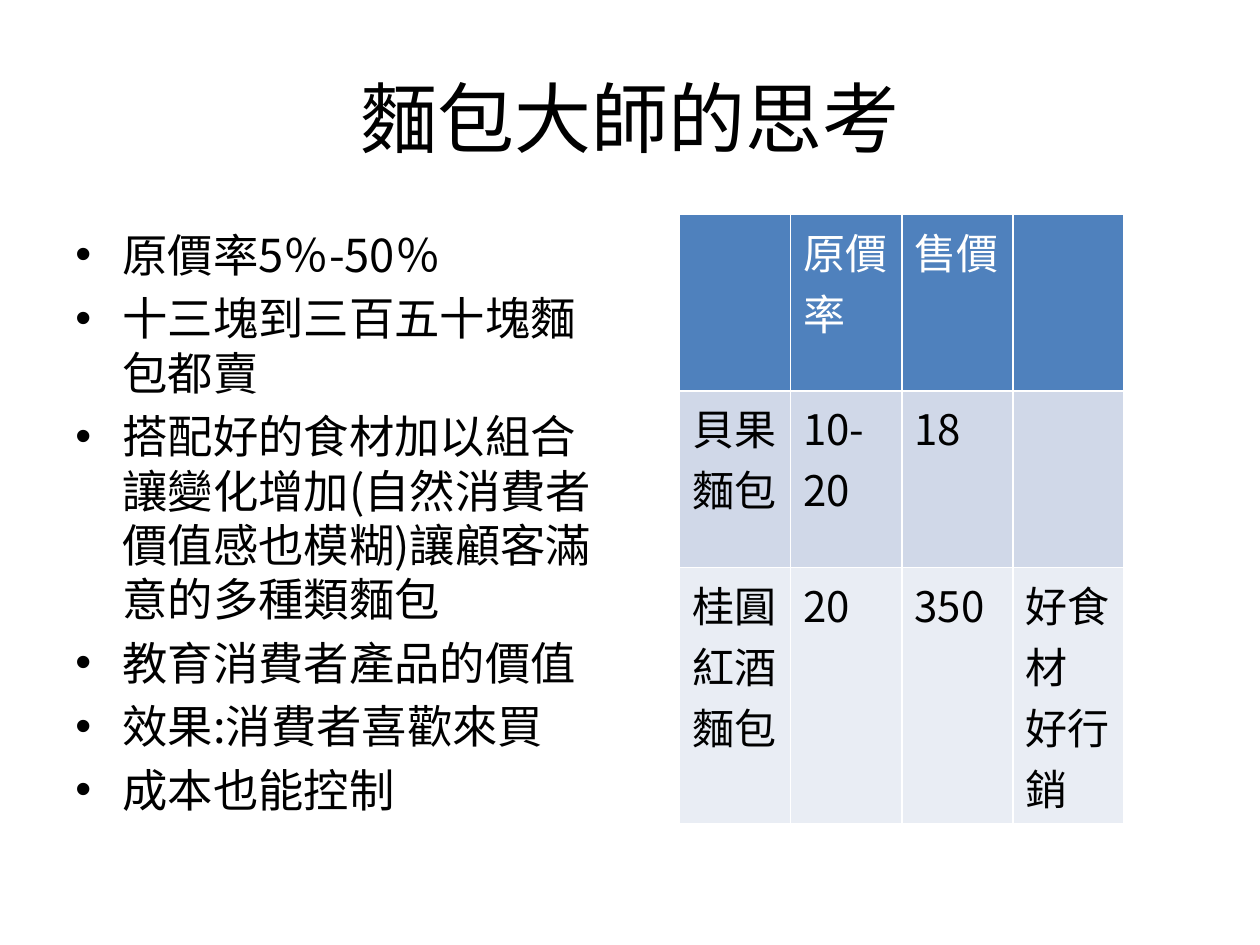
"""Build a slide on a baker's pricing: title, bullet list and price table."""
from lxml.etree import SubElement
from pptx import Presentation
from pptx.dml.color import RGBColor
from pptx.enum.text import MSO_ANCHOR as Anchor, PP_ALIGN as Align
from pptx.oxml.ns import qn
from pptx.util import Cm, Pt

FONT = "Noto Sans CJK SC"
COLORS = {
    "text": "000000",
    "white": "FFFFFF",
    "header": "4F81BD",
    "odd_row": "D0D8E8",
    "even_row": "E9EDF4",
}
BULLETS = [
    "原價率5％-50％",
    "十三塊到三百五十塊麵包都賣",
    "搭配好的食材加以組合 讓變化增加(自然消費者價值感也模糊)讓顧客滿意的多種類麵包",
    "教育消費者產品的價值",
    "效果:消費者喜歡來買",
    "成本也能控制",
]
PRICES = [
    ["", "原價率", "售價", ""],
    ["貝果麵包", "10-20", "18", ""],
    ["桂圓 紅酒麵包", "20", "350", "好食材\n好行銷"],
]
ROW_HEIGHTS = [3.56, 3.56, 5.16]
ROW_FILLS = ["header", "odd_row", "even_row"]
COLUMN_WIDTH = 2.24


def rgb(name):
    return RGBColor.from_string(COLORS[name])


def add_run(paragraph, text, size, color="text"):
    run = paragraph.add_run()
    run.text = text
    run.font.size = Pt(size)
    run.font.name = FONT
    run.font.color.rgb = rgb(color)
    SubElement(run.font._element, qn("a:ea"), typeface=FONT)


def fill_paragraphs(frame, lines, size, color="text"):
    for index, line in enumerate(lines):
        paragraph = frame.add_paragraph() if index else frame.paragraphs[0]
        add_run(paragraph, line, size, color)


def add_text_box(slide, left, top, width, height, anchor):
    box = slide.shapes.add_textbox(Cm(left), Cm(top), Cm(width), Cm(height))
    frame = box.text_frame
    frame.word_wrap = True
    frame.vertical_anchor = anchor
    return frame


def add_title(slide, text):
    frame = add_text_box(slide, 1.27, 0.76, 22.86, 3.18, Anchor.MIDDLE)
    fill_paragraphs(frame, [text], 44)
    frame.paragraphs[0].alignment = Align.CENTER


def add_bullets(slide, items):
    frame = add_text_box(slide, 1.27, 4.45, 11.23, 12.57, Anchor.TOP)
    fill_paragraphs(frame, items, 25.9)
    for paragraph in frame.paragraphs:
        paragraph.space_before = Pt(5.2)
        properties = paragraph._p.get_or_add_pPr()
        properties.set("marL", str(Cm(0.95)))
        properties.set("indent", str(-Cm(0.95)))
        SubElement(properties, qn("a:buFont"), typeface="Arial")
        SubElement(properties, qn("a:buChar"), char="•")


def set_borders(cell):
    properties = cell._tc.get_or_add_tcPr()
    for side in "LRTB":
        line = SubElement(properties, qn(f"a:ln{side}"), w=str(Pt(1)))
        fill = SubElement(line, qn("a:solidFill"))
        SubElement(fill, qn("a:srgbClr"), val=COLORS["white"])


def fill_cell(cell, text, fill, color):
    set_borders(cell)
    cell.fill.solid()
    cell.fill.fore_color.rgb = rgb(fill)
    if text:
        fill_paragraphs(cell.text_frame, text.split("\n"), 24, color)


def add_price_table(slide, rows):
    columns = len(rows[0])
    frame = slide.shapes.add_table(
        len(rows), columns, Cm(13.7), Cm(4.32),
        Cm(COLUMN_WIDTH * columns), Cm(sum(ROW_HEIGHTS)))
    table = frame.table
    for column in table.columns:
        column.width = Cm(COLUMN_WIDTH)
    for row, texts, height, fill in zip(table.rows, rows, ROW_HEIGHTS, ROW_FILLS):
        row.height = Cm(height)
        color = "white" if fill == "header" else "text"
        for cell, text in zip(row.cells, texts):
            fill_cell(cell, text, fill, color)


def main():
    presentation = Presentation()
    presentation.slide_width = Cm(25.4)
    presentation.slide_height = Cm(19.05)
    slide = presentation.slides.add_slide(presentation.slide_layouts[6])
    add_title(slide, "麵包大師的思考")
    add_bullets(slide, BULLETS)
    add_price_table(slide, PRICES)
    presentation.save("out.pptx")


if __name__ == "__main__":
    main()
